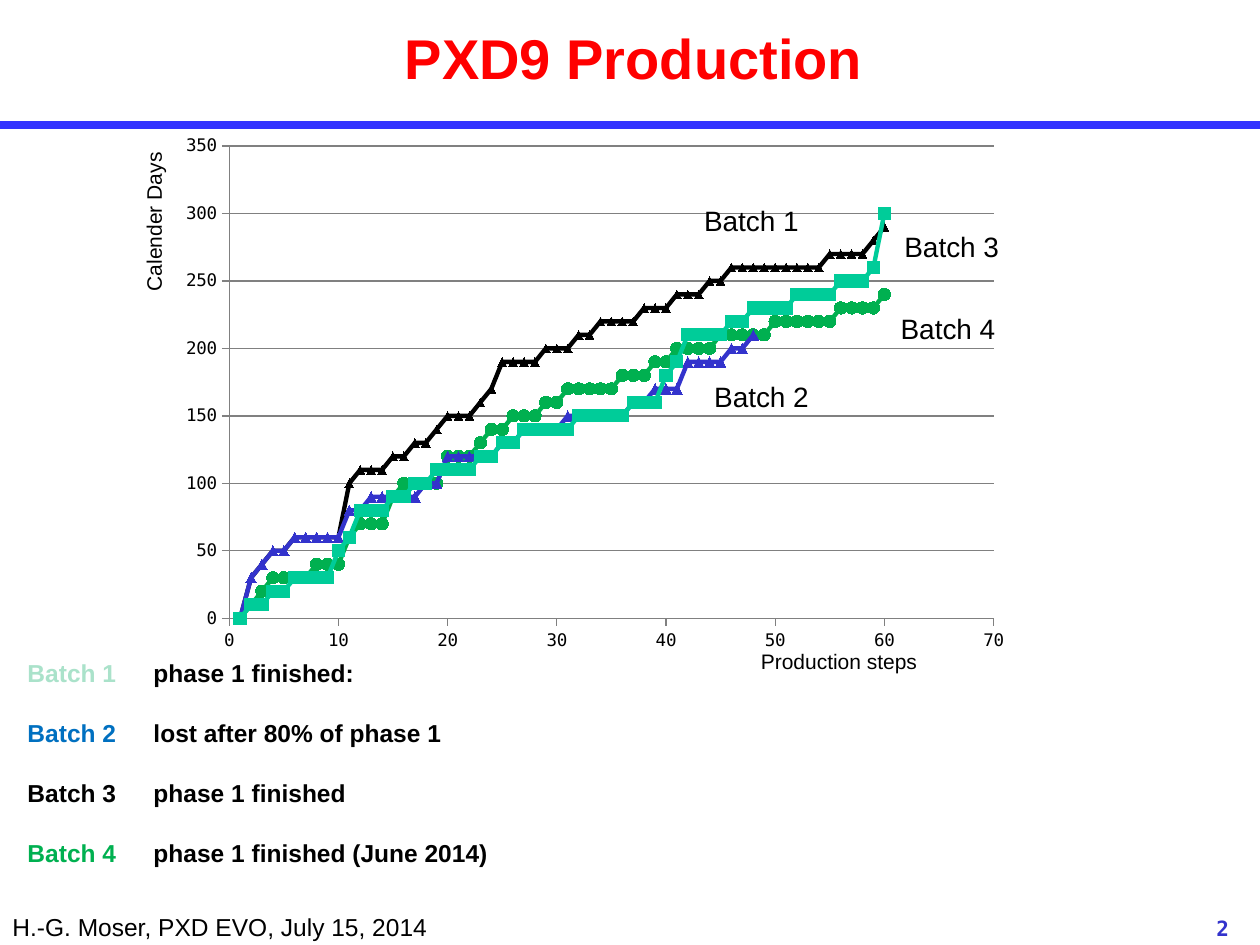
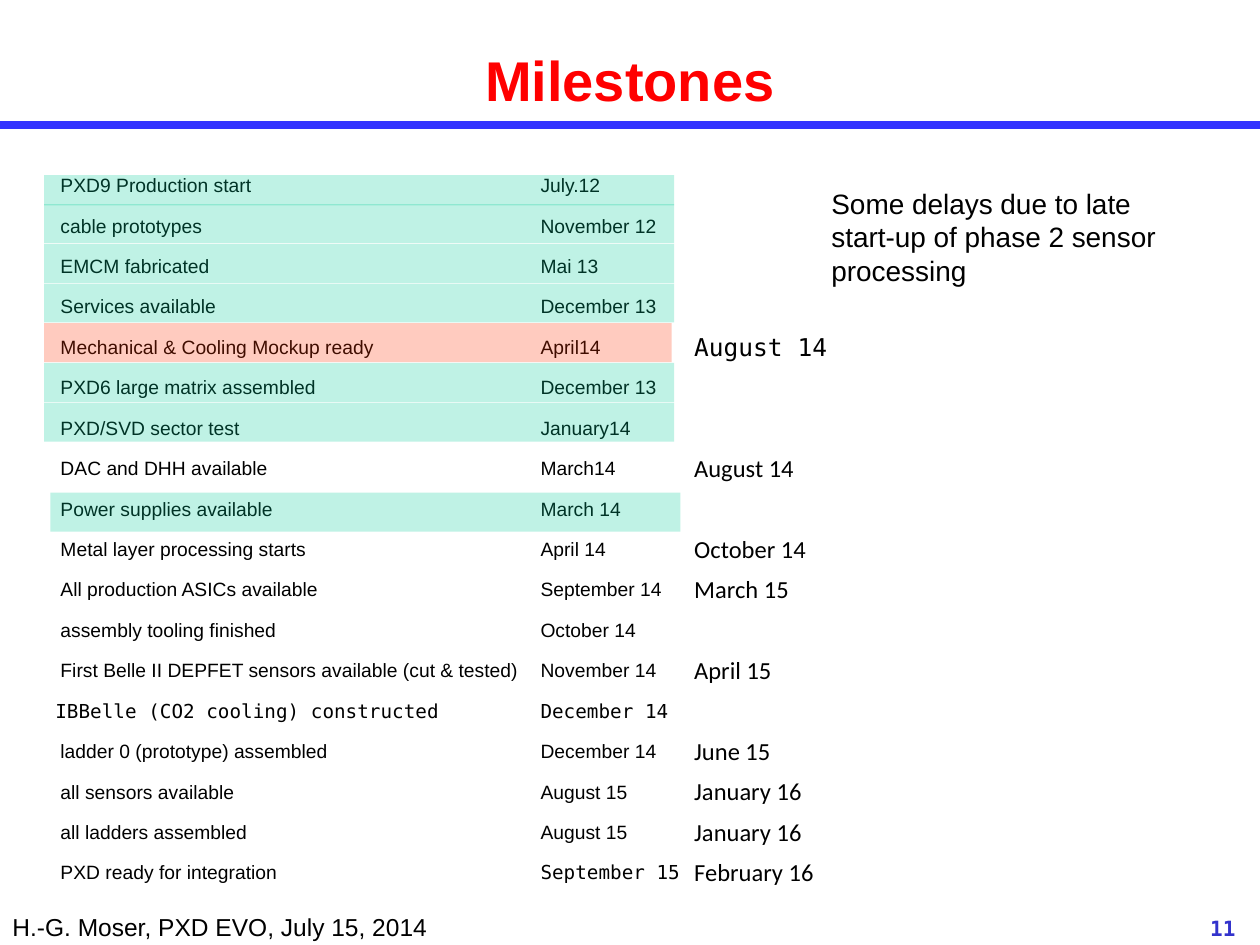
from lxml import etree
from pptx import Presentation
from pptx.chart.data import XyChartData
from pptx.dml.color import RGBColor
from pptx.enum import chart as ch, shapes, text
from pptx.oxml import ns, parse_xml
from pptx.util import Inches, Pt

BLACK = RGBColor(0, 0, 0)
RED = RGBColor(0xFF, 0, 0)
BAND = RGBColor(0x33, 0x33, 0xFF)
NAVY = RGBColor(0x33, 0x33, 0xCC)
TEAL = RGBColor(0, 0xCC, 0x99)
ORANGE = RGBColor(0xFF, 0x33, 0)
GREEN = RGBColor(0, 0xB0, 0x50)
MINT = RGBColor(0xAA, 0xE2, 0xCA)
BLUE = RGBColor(0, 0x70, 0xC0)
GRAY = RGBColor(0x80, 0x80, 0x80)
SANS, MONO, LATE = "Arial", "DejaVu Sans Mono", "Calibri"

TEAL_DAYS = [
    0, 10, 10, 20, 20, 30, 30, 30, 30, 50, 60, 80, 80, 80, 90, 90, 100, 100, 110, 110,
    110, 110, 120, 120, 130, 130, 140, 140, 140, 140, 140, 150, 150, 150, 150, 150, 160,
    160, 160, 180, 190, 210, 210, 210, 210, 220, 220, 230, 230, 230, 230, 240, 240, 240,
    240, 250, 250, 250, 260, 300]
NAVY_DAYS = [
    0, 30, 40, 50, 50, 60, 60, 60, 60, 60, 80, 80, 90, 90, 90, 90, 90, 100, 100, 120,
    120, 120, 120, 120, 130, 130, 140, 140, 140, 140, 150, 150, 150, 150, 150, 150, 160,
    160, 170, 170, 170, 190, 190, 190, 190, 200, 200, 210]
BLACK_DAYS = [
    0, 30, 40, 50, 50, 60, 60, 60, 60, 60, 100, 110, 110, 110, 120, 120, 130, 130, 140,
    150, 150, 150, 160, 170, 190, 190, 190, 190, 200, 200, 200, 210, 210, 220, 220, 220,
    220, 230, 230, 230, 240, 240, 240, 250, 250, 260, 260, 260, 260, 260, 260, 260, 260,
    260, 270, 270, 270, 270, 280, 290]
GREEN_DAYS = [
    0, 10, 20, 30, 30, 30, 30, 40, 40, 40, 60, 70, 70, 70, 90, 100, 100, 100, 100, 120,
    120, 120, 130, 140, 140, 150, 150, 150, 160, 160, 170, 170, 170, 170, 170, 180, 180,
    180, 190, 190, 200, 200, 200, 200, 210, 210, 210, 210, 210, 220, 220, 220, 220, 220,
    220, 230, 230, 230, 230, 240]
MARK = ch.XL_MARKER_STYLE
SERIES = [
    ("Series 1", TEAL_DAYS, TEAL, MARK.SQUARE, 7),
    ("Series 2", NAVY_DAYS, NAVY, MARK.TRIANGLE, 6),
    ("Series 3", BLACK_DAYS, BLACK, MARK.TRIANGLE, 5),
    ("Series 4", GREEN_DAYS, GREEN, MARK.CIRCLE, 7),
]
BATCHES = [
    ("Batch 1", MINT, "phase 1 finished:"),
    ("Batch 2", BLUE, "lost after 80% of phase 1"),
    ("Batch 3", BLACK, "phase 1 finished"),
    ("Batch 4", GREEN, "phase 1 finished (June 2014)"),
]
CURVE_LABELS = [("Batch 1", 5.49, 1.57), ("Batch 3", 7.08, 1.77),
                ("Batch 2", 5.57, 2.96), ("Batch 4", 7.05, 2.42)]
MILESTONES = [
    ("PXD9 Production start", "July.12", ""),
    ("cable prototypes", "November 12", ""),
    ("EMCM fabricated", "Mai 13", ""),
    ("Services available", "December 13", ""),
    ("Mechanical & Cooling Mockup ready", "April14", "August 14"),
    ("PXD6 large matrix assembled", "December 13", ""),
    ("PXD/SVD sector test", "January14", ""),
    ("DAC and DHH available", "March14", "August 14"),
    ("Power supplies available", "March 14", ""),
    ("Metal layer processing starts", "April 14", "October 14"),
    ("All production ASICs available", "September 14", "March 15"),
    ("assembly tooling finished", "October 14", ""),
    ("First Belle II DEPFET sensors available (cut & tested)", "November 14", "April 15"),
    ("IBBelle (CO2 cooling) constructed", "December 14", ""),
    ("ladder 0 (prototype) assembled", "December 14", "June 15"),
    ("all sensors available", "August 15", "January 16"),
    ("all ladders assembled", "August 15", "January 16"),
    ("PXD ready for integration", "September 15", "February 16"),
]
MONO_CELLS = {(4, 2), (13, 0), (13, 1), (17, 1)}


def write(tf, paras, size=16, font=SANS, color=BLACK, bold=False, align=None, gap=0):
    """Fill a text frame with paragraphs, each a string or a list of (text, colour)."""
    for i, runs in enumerate(paras):
        p = tf.paragraphs[0] if i == 0 else tf.add_paragraph()
        p.alignment = align
        if i and gap:
            p.space_before = Pt(gap)
        for words, c in [(runs, color)] if isinstance(runs, str) else runs:
            r = p.add_run()
            r.text = words
            r.font.size, r.font.name, r.font.bold = Pt(size), font, bold
            r.font.color.rgb = c


def add_text(s, box, *paras, wrap=True, middle=False, **fmt):
    """Add a text box at (left, top, width, height) in inches."""
    sp = s.shapes.add_textbox(*map(Inches, box))
    tf = sp.text_frame
    tf.word_wrap = wrap
    if middle:
        tf.vertical_anchor = text.MSO_ANCHOR.MIDDLE
    write(tf, paras, **fmt)
    return sp


def add_frame(prs, title, title_box, number):
    """Add a slide with the shared band, footer, title and page number."""
    s = prs.slides.add_slide(prs.slide_layouts[6])
    band = s.shapes.add_connector(shapes.MSO_CONNECTOR.STRAIGHT, 0, Inches(0.99),
                                  prs.slide_width, Inches(0.99))
    band.line.color.rgb, band.line.width = BAND, Pt(4.5)
    etree.SubElement(band._element.spPr, ns.qn("a:effectLst"))
    add_text(s, (0, 7.19, 3.51, 0.34), "H.-G. Moser, PXD EVO, July 15, 2014",
             wrap=False, size=14)
    center = text.PP_ALIGN.CENTER
    add_text(s, title_box, title, middle=True, size=32, color=RED, bold=True, align=center)
    add_text(s, (9.41, 7.22, 0.59, 0.28), number, size=12, font=MONO, color=NAVY,
             bold=True, align=center)
    return s


def style_axis(axis, top, step):
    """Give an axis its range, ticks and gray line."""
    axis.minimum_scale, axis.maximum_scale, axis.major_unit = 0, top, step
    axis.major_tick_mark = ch.XL_TICK_MARK.OUTSIDE
    axis.minor_tick_mark = ch.XL_TICK_MARK.NONE
    axis.format.line.color.rgb = GRAY


def add_days_chart(s, box):
    """Add the scatter chart of calendar days against production steps."""
    data = XyChartData()
    for name, days, *_ in SERIES:
        series = data.add_series(name)
        for step, day in enumerate(days, 1):
            series.add_data_point(step, day)
    chart = s.shapes.add_chart(ch.XL_CHART_TYPE.XY_SCATTER_LINES, *map(Inches, box),
                               data).chart
    chart.has_legend = chart.has_title = False
    chart.font.size, chart.font.name, chart.font.color.rgb = Pt(10), MONO, BLACK
    style_axis(chart.category_axis, 70, 10)
    style_axis(chart.value_axis, 350, 50)
    chart.category_axis.has_major_gridlines = False
    chart.value_axis.major_gridlines.format.line.color.rgb = GRAY
    plot = chart.plots[0]
    plot.vary_by_categories = False
    for series, (_, _, color, style, size) in zip(plot.series, SERIES):
        series.smooth = False
        series.format.line.color.rgb, series.format.line.width = color, Pt(2.5)
        marker = series.marker
        marker.style, marker.size = style, size
        marker.format.fill.solid()
        marker.format.fill.fore_color.rgb = color
        marker.format.line.color.rgb = color
    area = chart._chartSpace.chart.plotArea
    for old in area.findall(ns.qn("c:layout")):
        area.remove(old)
    values = zip(("x", "y", "w", "h"), (0.06, 0.022, 0.81, 0.924))
    area.insert(0, parse_xml(
        f'<c:layout {ns.nsdecls("c")}><c:manualLayout><c:layoutTarget val="inner"/>'
        '<c:xMode val="edge"/><c:yMode val="edge"/>'
        + "".join(f'<c:{k} val="{v}"/>' for k, v in values)
        + "</c:manualLayout></c:layout>"))


def production_slide(prs):
    """Build the slide with the production chart and the batch status."""
    s = add_frame(prs, "PXD9 Production", (0.03, 0, 10, 0.91), "2")
    add_days_chart(s, (1.37, 1.07, 7.49, 4.09))
    status = [[(name, color), ("\t" + state, BLACK)] for name, color, state in BATCHES]
    add_text(s, (0.12, 5.17, 9.6, 1.75), *status, size=14, bold=True, gap=17.6)
    add_text(s, (0.19, 1.23, 2.06, 0.3), "Calender Days", size=12).rotation = 270
    add_text(s, (5.94, 5.1, 1.45, 0.3), "Production steps", wrap=False, size=12)
    for name, left, top in CURVE_LABELS:
        add_text(s, (left, top, 1.1, 0.37), name)


def add_milestone_table(s, left, top):
    """Add the table of milestones with planned and revised dates."""
    widths, height = (3.85, 1.22, 1.22), 5.78
    table = s.shapes.add_table(len(MILESTONES), 3, Inches(left), Inches(top),
                               Inches(sum(widths)), Inches(height)).table
    table.first_row = table.horz_banding = False
    for col, width in zip(table.columns, widths):
        col.width = Inches(width)
    for i, row in enumerate(MILESTONES):
        for j, words in enumerate(row):
            mono = (i, j) in MONO_CELLS
            cell = table.cell(i, j)
            cell.fill.background()
            cell.vertical_anchor = text.MSO_ANCHOR.MIDDLE
            cell.margin_left = Inches(0.05 if j == 0 and not mono else 0.01)
            cell.margin_top = cell.margin_right = Inches(0.01)
            cell.margin_bottom = 0
            if words:
                write(cell.text_frame, [words], size=14 if j == 2 else 11,
                      font=MONO if mono else LATE if j == 2 else SANS)


def add_highlight(s, box, color):
    """Add a translucent bar that marks the state of a milestone."""
    sp = s.shapes.add_shape(shapes.MSO_SHAPE.RECTANGLE, *map(Inches, box))
    sp.shadow.inherit = False
    sp.line.fill.background()
    sp.fill.solid()
    sp.fill.fore_color.rgb = color
    clr = sp._element.spPr.find(".//" + ns.qn("a:srgbClr"))
    etree.SubElement(clr, ns.qn("a:alpha"), val="25000")


def milestones_slide(prs):
    """Build the slide with the milestone table and its highlights."""
    s = add_frame(prs, "Milestones", (0, 0.17, 10, 0.91), "11")
    add_milestone_table(s, 0.43, 1.31)
    add_highlight(s, (0.35, 1.39, 5, 0.24), TEAL)
    for i in range(6):
        late = i == 3
        add_highlight(s, (0.35, 1.62 + 0.315 * i, 4.98 if late else 5, 0.31),
                      ORANGE if late else TEAL)
    add_highlight(s, (0.4, 3.91, 5, 0.31), TEAL)
    add_text(s, (6.5, 1.43, 2.99, 0.91), "Some delays due to late",
             "start-up of phase 2 sensor processing")


def main():
    """Build and save the presentation."""
    prs = Presentation()
    prs.slide_width, prs.slide_height = Inches(10), Inches(7.5)
    production_slide(prs)
    milestones_slide(prs)
    prs.save("out.pptx")


if __name__ == "__main__":
    main()
